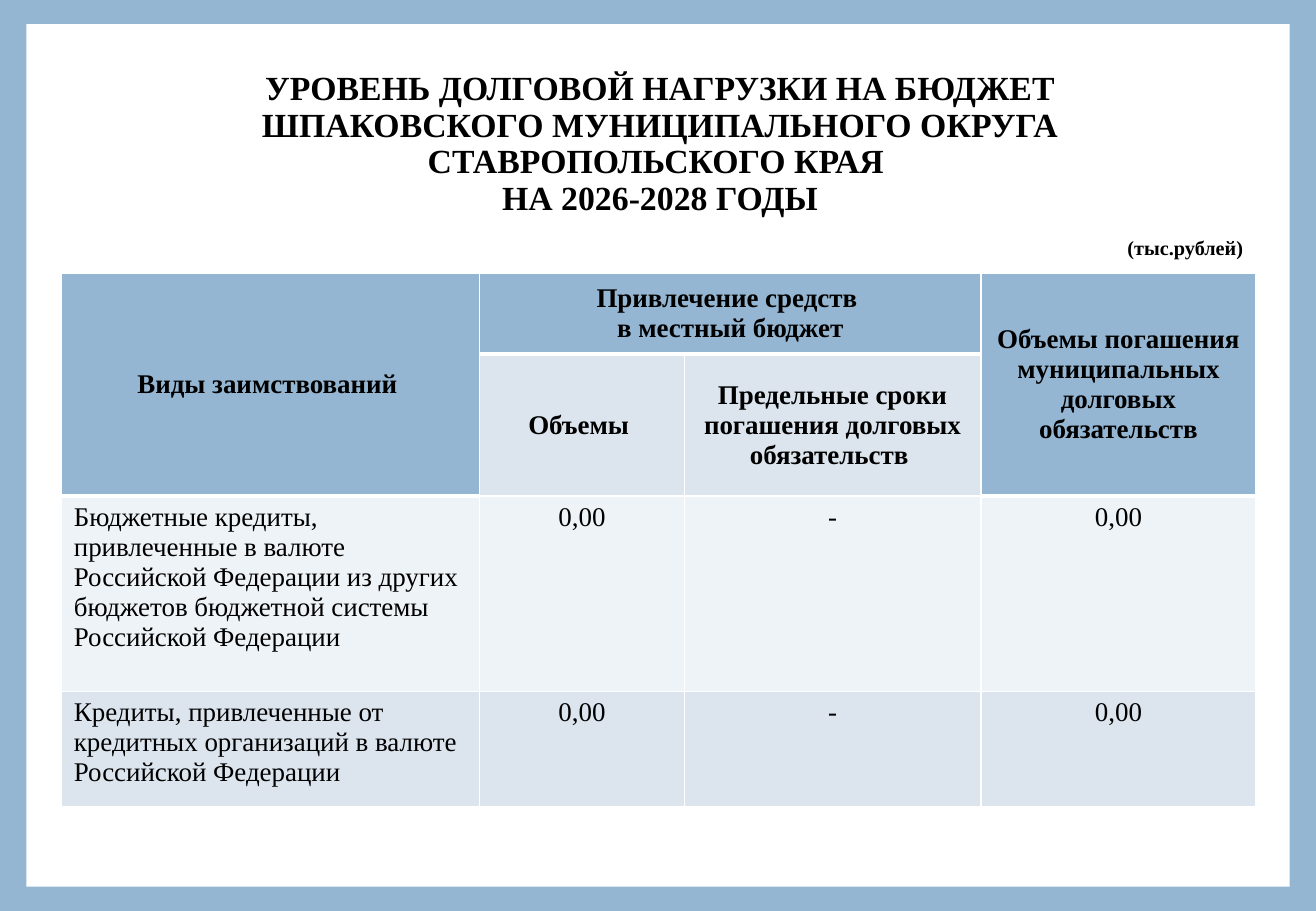
import dataclasses

import pptx
import pptx.dml.color
import pptx.enum.shapes
import pptx.enum.text
import pptx.oxml
import pptx.oxml.ns
import pptx.util

ALIGN = pptx.enum.text.PP_ALIGN
ANCHOR = pptx.enum.text.MSO_ANCHOR


@dataclasses.dataclass(frozen=True)
class Theme:
    font: str = "Times New Roman"
    ink: str = "000000"
    paper: str = "FFFFFF"
    accent: str = "94B6D2"
    band_dark: str = "DCE5EE"
    band_light: str = "EEF3F7"
    title_size: int = 20
    table_size: int = 16
    unit_size: int = 12
    thin: int = 1
    thick: int = 3


class DebtSlide:
    SCALE = 7620

    def __init__(self, deck, theme):
        self.theme = theme
        self.slide = deck.slides.add_slide(deck.slide_layouts[6])
        self.fill(self.slide.background, theme.accent)

    def px(self, *lengths):
        return [pptx.util.Emu(length * self.SCALE) for length in lengths]

    def color(self, value):
        return pptx.dml.color.RGBColor.from_string(value)

    def fill(self, owner, value):
        owner.fill.solid()
        owner.fill.fore_color.rgb = self.color(value)

    def panel(self, *box):
        panel = self.slide.shapes.add_shape(
            pptx.enum.shapes.MSO_SHAPE.RECTANGLE, *self.px(*box))
        panel.shadow.inherit = False
        self.fill(panel, self.theme.paper)
        panel.line.fill.background()

    def paragraphs(self, frame, contents, size, bold, align, spacing=None):
        for index, lines in enumerate(contents):
            paragraph = frame.add_paragraph() if index else frame.paragraphs[0]
            paragraph.alignment = align
            if spacing:
                paragraph.line_spacing = spacing
            for number, line in enumerate(lines.split("\n")):
                if number:
                    paragraph.add_line_break()
                run = paragraph.add_run()
                run.text = line
                run.font.name = self.theme.font
                run.font.size = pptx.util.Pt(size)
                run.font.bold = bold
                run.font.color.rgb = self.color(self.theme.ink)

    def text(self, box, content, size, align, spacing=None):
        frame = self.slide.shapes.add_textbox(*self.px(*box)).text_frame
        frame.word_wrap = True
        frame.vertical_anchor = ANCHOR.MIDDLE
        self.paragraphs(frame, [content], size, True, align, spacing)

    def borders(self, cell, bottom):
        properties = cell._tc.get_or_add_tcPr()
        widths = dict.fromkeys("LRT", self.theme.thin) | {"B": bottom}
        for index, (side, width) in enumerate(widths.items()):
            properties.insert(index, pptx.oxml.parse_xml(
                f'<a:ln{side} {pptx.oxml.ns.nsdecls("a")} w="{pptx.util.Pt(width)}">'
                f'<a:solidFill><a:srgbClr val="{self.theme.paper}"/></a:solidFill>'
                f'</a:ln{side}>'))

    def table(self, left, top, widths, heights, merges, texts, fills, header_rows):
        table = self.slide.shapes.add_table(
            len(heights), len(widths),
            *self.px(left, top, sum(widths), sum(heights))).table
        for column, width in zip(table.columns, self.px(*widths)):
            column.width = width
        for row, height in zip(table.rows, self.px(*heights)):
            row.height = height
        for start, end in merges:
            table.cell(*start).merge(table.cell(*end))
        for r, (row_texts, row_fills) in enumerate(zip(texts, fills)):
            header = r < header_rows
            for c, (content, color) in enumerate(zip(row_texts, row_fills)):
                cell = table.cell(r, c)
                self.fill(cell, color)
                accent = color == self.theme.accent
                self.borders(cell, self.theme.thick if accent else self.theme.thin)
                cell.vertical_anchor = ANCHOR.MIDDLE if header else ANCHOR.TOP
                align = ALIGN.CENTER if header or c else ALIGN.LEFT
                self.paragraphs(
                    cell.text_frame, content, self.theme.table_size, header, align)


def main():
    deck = pptx.Presentation()
    deck.slide_width = pptx.util.Emu(1300 * DebtSlide.SCALE)
    deck.slide_height = pptx.util.Emu(900 * DebtSlide.SCALE)
    theme = Theme()
    debt = DebtSlide(deck, theme)

    debt.panel(26, 24, 1248, 852)
    debt.text(
        (125, 66, 1054, 154),
        "УРОВЕНЬ ДОЛГОВОЙ НАГРУЗКИ НА БЮДЖЕТ ШПАКОВСКОГО МУНИЦИПАЛЬНОГО ОКРУГА "
        "СТАВРОПОЛЬСКОГО КРАЯ \nНА 2026-2028 ГОДЫ",
        theme.title_size, ALIGN.CENTER, 0.9)

    amounts = [["0,00"], ["-"], ["0,00"]]
    debt.table(
        61, 270, [413, 202, 293, 272], [80, 114, 193, 114],
        merges=[((0, 0), (1, 0)), ((0, 1), (0, 2)), ((0, 3), (1, 3))],
        texts=[
            [["Виды заимствований "],
             ["Привлечение средств ", "в местный бюджет"],
             [],
             ["Объемы погашения", "муниципальных долговых", "обязательств"]],
            [[],
             ["Объемы "],
             ["Предельные сроки", "погашения долговых", "обязательств "],
             []],
            [["Бюджетные кредиты, привлеченные в валюте Российской Федерации "
              "из других бюджетов бюджетной системы Российской Федерации"], *amounts],
            [["Кредиты, привлеченные от кредитных организаций в валюте "
              "Российской Федерации"], *amounts],
        ],
        fills=[
            [theme.accent] * 4,
            [theme.accent, theme.band_dark, theme.band_dark, theme.accent],
            [theme.band_light] * 4,
            [theme.band_dark] * 4,
        ],
        header_rows=2)
    debt.text((1102, 226, 151, 36), "(тыс.рублей)", theme.unit_size, ALIGN.LEFT)

    deck.save("out.pptx")


if __name__ == "__main__":
    main()
